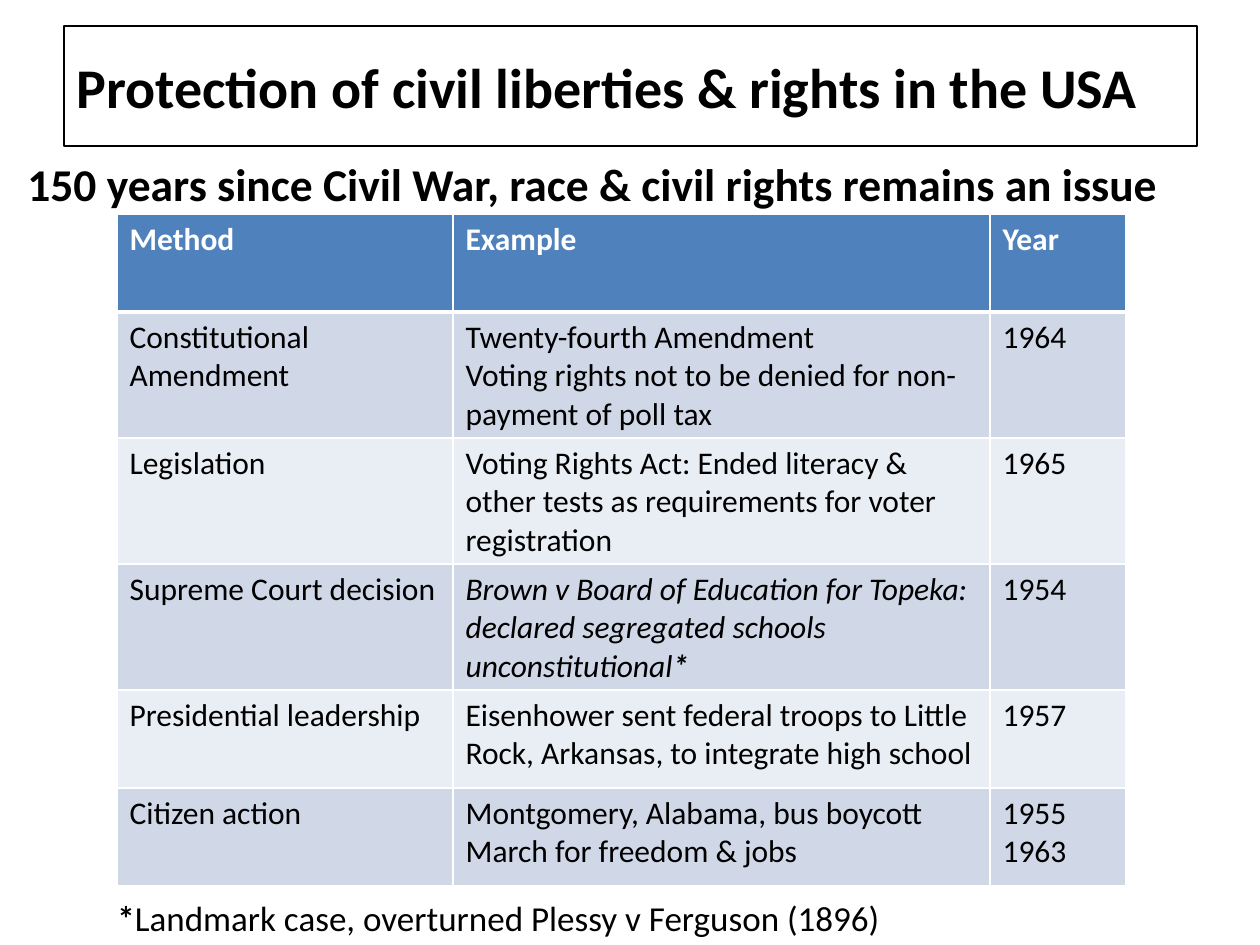
from dataclasses import dataclass

from lxml import etree
from pptx import Presentation
from pptx import util as u
from pptx.dml.color import RGBColor
from pptx.enum import shapes, text
from pptx.oxml import ns

PX = u.Inches(1) // 126
FONT = "Calibri"
COLORS = {
    "ink": "000000",
    "white": "FFFFFF",
    "header": "4F81BD",
    "band_dark": "D0D8E8",
    "band_light": "E9EDF4",
}


@dataclass(frozen=True)
class Box:
    left: int
    top: int
    width: int
    height: int

    def emu(self) -> list[int]:
        return [side * PX for side in (self.left, self.top, self.width, self.height)]


@dataclass(frozen=True)
class Run:
    words: str
    bold: bool = False
    italic: bool = False


@dataclass(frozen=True)
class Measure:
    """One table row; each cell is a list of paragraphs, each a list of runs."""
    method: str
    example: list[list[Run]]
    years: list[str]
    height: int = 117


def rgb(name: str) -> RGBColor:
    return RGBColor.from_string(COLORS[name])


def write(frame, paragraphs: list[list[Run]], *, size: int, color: str = "ink",
          anchor=text.MSO_ANCHOR.TOP) -> None:
    frame.word_wrap = True
    frame.vertical_anchor = anchor
    for index, runs in enumerate(paragraphs):
        paragraph = frame.add_paragraph() if index else frame.paragraphs[0]
        paragraph.alignment = text.PP_ALIGN.LEFT
        for part in runs:
            run = paragraph.add_run()
            run.text = part.words
            font = run.font
            font.name, font.size = FONT, u.Pt(size)
            font.bold, font.italic = part.bold, part.italic
            font.color.rgb = rgb(color)


def add_text(slide, box: Box, runs: list[Run], size: int) -> None:
    write(slide.shapes.add_textbox(*box.emu()).text_frame, [runs], size=size)


def set_borders(cell, bottom: int) -> None:
    properties = cell._tc.get_or_add_tcPr()
    widths = {"lnL": 1, "lnR": 1, "lnT": 1, "lnB": bottom}
    for position, (side, points) in enumerate(widths.items()):
        line = etree.Element(ns.qn(f"a:{side}"), w=str(u.Pt(points)))
        fill = etree.SubElement(line, ns.qn("a:solidFill"))
        etree.SubElement(fill, ns.qn("a:srgbClr"), val=COLORS["white"])
        properties.insert(position, line)


def fill_cell(cell, paragraphs: list[list[Run]], fill: str, color: str, bottom: int) -> None:
    cell.fill.solid()
    cell.fill.fore_color.rgb = rgb(fill)
    write(cell.text_frame, paragraphs, size=18, color=color)
    set_borders(cell, bottom)


def add_measures(slide, box: Box, widths: list[int], headings: list[str],
                 header_height: int, measures: list[Measure]) -> None:
    table = slide.shapes.add_table(len(measures) + 1, len(widths), *box.emu()).table
    for column, width in zip(table.columns, widths):
        column.width = width * PX
    # Header row
    table.rows[0].height = header_height * PX
    for column, heading in enumerate(headings):
        fill_cell(table.cell(0, column), [[Run(heading, bold=True)]], "header", "white", 3)
    # Banded body rows
    for row, measure in enumerate(measures, start=1):
        table.rows[row].height = measure.height * PX
        fill = "band_dark" if row % 2 else "band_light"
        contents = ([[Run(measure.method)]], measure.example,
                    [[Run(year)] for year in measure.years])
        for column, paragraphs in enumerate(contents):
            fill_cell(table.cell(row, column), paragraphs, fill, "ink", 1)


MEASURES = [
    Measure("Constitutional Amendment",
            [[Run("Twenty-fourth Amendment")],
             [Run("Voting rights not to be denied for non-payment of poll tax")]],
            ["1964"]),
    Measure("Legislation",
            [[Run("Voting Rights Act: Ended literacy & other tests as requirements "
                  "for voter registration")]],
            ["1965"]),
    Measure("Supreme Court decision",
            [[Run("Brown v Board of Education for Topeka: declared segregated schools "
                  "unconstitutional", italic=True),
              Run("*", bold=True, italic=True)]],
            ["1954"]),
    Measure("Presidential leadership",
            [[Run("Eisenhower sent federal troops to Little Rock, Arkansas, "
                  "to integrate high school")]],
            ["1957"], height=98),
    Measure("Citizen action",
            [[Run("Montgomery, Alabama, bus boycott")], [Run("March for freedom & jobs")]],
            ["1955", "1963"], height=98),
]


def main() -> None:
    deck = Presentation()
    deck.slide_width, deck.slide_height = u.Inches(10), u.Inches(7.5)
    slide = deck.slides.add_slide(deck.slide_layouts[6])

    # Lead statement
    add_text(slide, Box(15, 150, 1230, 709),
             [Run("150 years since Civil War, race & civil rights remains an issue", bold=True)],
             size=26)

    # Framed title
    title = slide.shapes.add_shape(shapes.MSO_SHAPE.RECTANGLE, *Box(64, 26, 1133, 120).emu())
    title.shadow.inherit = False
    title.fill.background()
    title.line.color.rgb = rgb("ink")
    title.line.width = u.Pt(0.75)
    write(title.text_frame,
          [[Run("Protection of civil liberties & rights in the USA", bold=True)]],
          size=32, anchor=text.MSO_ANCHOR.MIDDLE)

    # Methods of protection
    add_measures(slide, Box(117, 214, 1009, 673), [336, 537, 136],
                 ["Method", "Example", "Year"], 98, MEASURES)

    # Footnote
    add_text(slide, Box(105, 890, 1191, 55),
             [Run("*", bold=True), Run("Landmark case, overturned Plessy v Ferguson (1896)")],
             size=20)

    deck.save("out.pptx")


if __name__ == "__main__":
    main()
